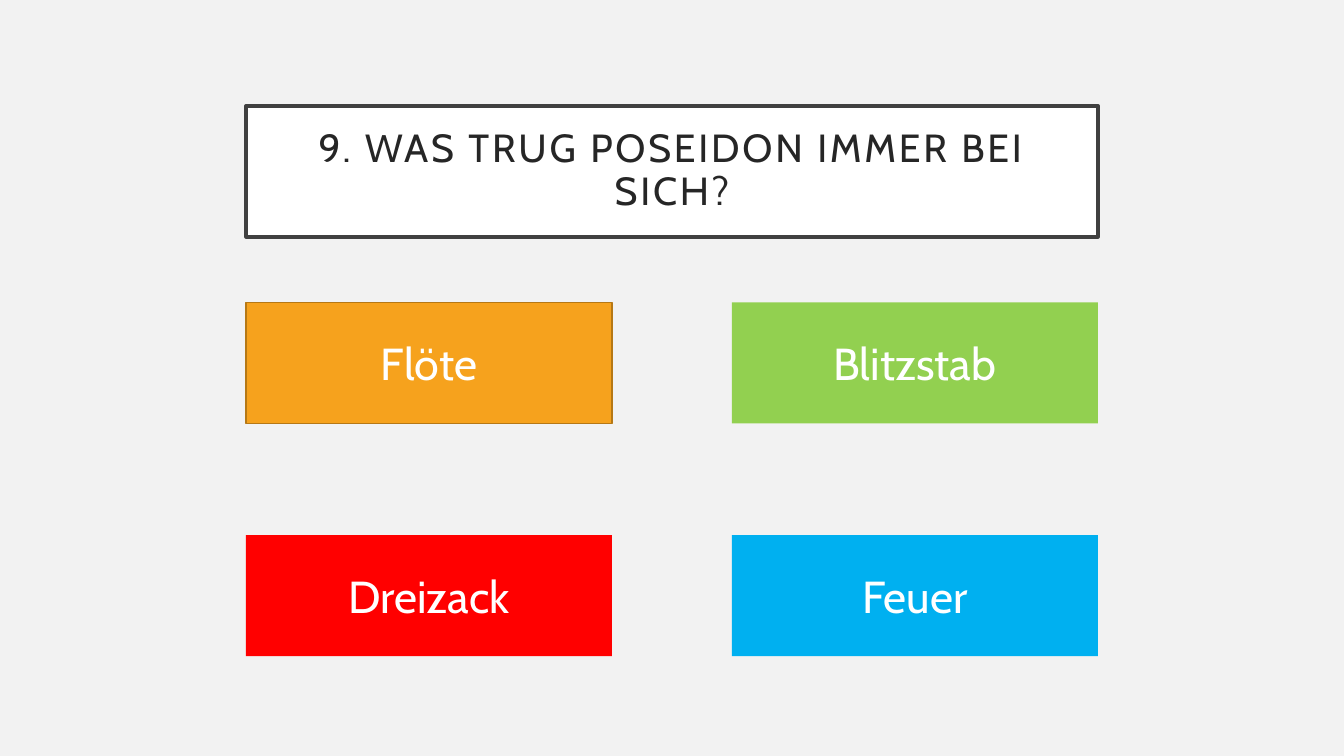
import pptx
import pptx.util
import pptx.dml.color
import pptx.enum.shapes
import pptx.enum.text

QUESTION = "9. WAS TRUG POSEIDON IMMER BEI SICH?"
ANSWERS = [
    [("Flöte", "F6A21D", "B67815"), ("Blitzstab", "92D050", None)],
    [("Dreizack", "FF0000", None), ("Feuer", "00B0F0", None)],
]
THEME = {
    "font": "Cabin", "background": "F2F2F2", "panel": "FFFFFF", "border": "404040",
    "title": "262626", "answer": "FFFFFF", "title_size": 28, "answer_size": 32,
    "title_spacing": 2, "title_border": 2.5, "answer_border": 1,
}
LEFT, TITLE_TOP, TITLE_W, TITLE_H, TITLE_INSET = 2.44, 1.05, 8.45, 1.3, 0.2
GRID_TOP, ROW_STEP, BOX_W, BOX_H = 3, 2.31, 3.63, 1.2
COLUMN_STEP = TITLE_W - BOX_W

Inches = pptx.util.Inches


def rgb(value):
    return pptx.dml.color.RGBColor.from_string(value)


def paint(sp, fill, line, width):
    sp.fill.solid()
    sp.fill.fore_color.rgb = rgb(fill)
    if line:
        sp.line.color.rgb = rgb(line)
        sp.line.width = pptx.util.Pt(width)
    else:
        sp.line.fill.background()


def write(sp, text, size, color):
    tf = sp.text_frame
    tf.word_wrap = True
    tf.auto_size = pptx.enum.text.MSO_AUTO_SIZE.NONE
    tf.vertical_anchor = pptx.enum.text.MSO_ANCHOR.MIDDLE
    p = tf.paragraphs[0]
    p.alignment = pptx.enum.text.PP_ALIGN.CENTER
    r = p.add_run()
    r.text = text
    r.font.name = THEME["font"]
    r.font.size = pptx.util.Pt(size)
    r.font.color.rgb = rgb(color)
    return p, r


def add_title(s):
    sp = s.shapes.title
    sp.left, sp.top = Inches(LEFT), Inches(TITLE_TOP)
    sp.width, sp.height = Inches(TITLE_W), Inches(TITLE_H)
    paint(sp, THEME["panel"], THEME["border"], THEME["title_border"])
    p, r = write(sp, QUESTION, THEME["title_size"], THEME["title"])
    p.line_spacing = 0.9
    r.font._element.set("spc", str(THEME["title_spacing"] * 100))
    tf = sp.text_frame
    tf.margin_left = tf.margin_right = Inches(TITLE_INSET)
    tf.margin_top = tf.margin_bottom = Inches(TITLE_INSET)


def add_answers(s):
    for row, answers in enumerate(ANSWERS):
        for column, (text, fill, line) in enumerate(answers):
            sp = s.shapes.add_shape(
                pptx.enum.shapes.MSO_SHAPE.RECTANGLE,
                Inches(LEFT + column * COLUMN_STEP), Inches(GRID_TOP + row * ROW_STEP),
                Inches(BOX_W), Inches(BOX_H))
            sp.shadow.inherit = False
            paint(sp, fill, line, THEME["answer_border"])
            write(sp, text, THEME["answer_size"], THEME["answer"])


def main():
    prs = pptx.Presentation()
    prs.slide_width, prs.slide_height = Inches(13.33), Inches(7.5)
    s = prs.slides.add_slide(prs.slide_layouts[5])
    s.background.fill.solid()
    s.background.fill.fore_color.rgb = rgb(THEME["background"])
    add_title(s)
    add_answers(s)
    prs.save("out.pptx")


if __name__ == "__main__":
    main()
